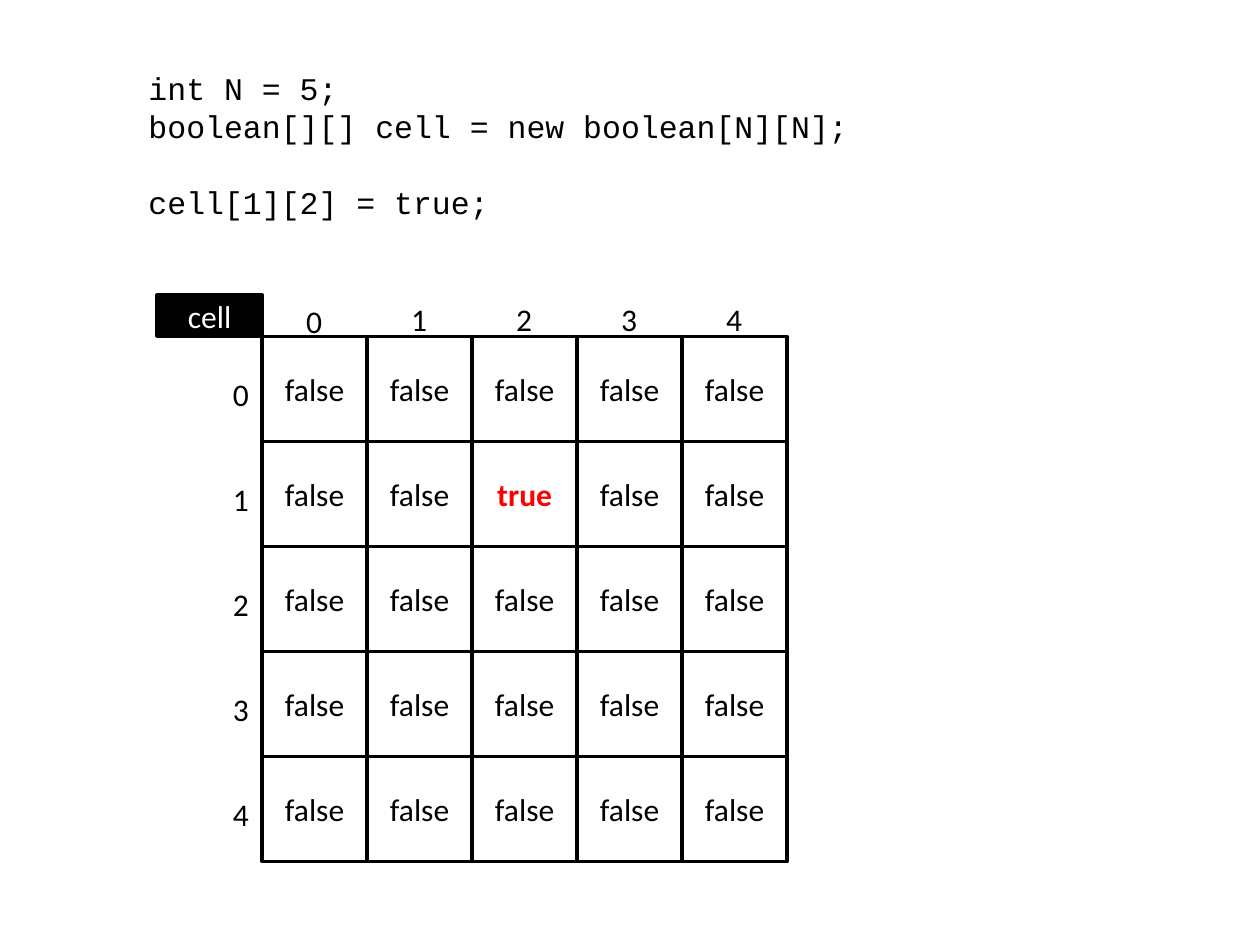
"""Build a slide showing a two-dimensional boolean array and the code that fills it."""
from pptx import Presentation
from pptx import util as u
from pptx.dml.color import RGBColor
from pptx.enum import shapes, text

CODE = ["int N = 5;", "boolean[][] cell = new boolean[N][N];", "cell[1][2] = true;"]
ARRAY_NAME = "cell"
SIZE = 5
TRUE_CELLS = {(1, 2)}
COLORS = {"ink": "000000", "paper": "FFFFFF", "true": "FF0000"}

SIDE = 5 / 6
GRID_LEFT, GRID_TOP = 2.08, 2.67
HEADER_HEIGHT = 0.33
LABEL_WIDTH, LABEL_HEIGHT = 0.33, 0.4
BLANK_LINE = u.Pt(21.7)


def color(name):
    return RGBColor.from_string(COLORS[name])


def write(box, lines, ink="ink", **formats):
    frame = box.text_frame
    for number, line in enumerate(lines):
        para = frame.paragraphs[0] if number == 0 else frame.add_paragraph()
        span = para.add_run()
        span.text = line
        span.font.color.rgb = color(ink)
        for key, value in {"size": u.Pt(18), "name": "Calibri", **formats}.items():
            setattr(span.font, key, value)
    return frame


def add_box(page, place, label, fill="paper", ink="ink", **formats):
    box = page.shapes.add_shape(shapes.MSO_SHAPE.RECTANGLE, *map(u.Inches, place))
    box.shadow.inherit = False
    box.fill.solid()
    box.fill.fore_color.rgb = color(fill)
    box.line.color.rgb = color("ink")
    box.line.width = u.Pt(2)
    frame = write(box, [label], ink, **formats)
    frame.vertical_anchor = text.MSO_ANCHOR.MIDDLE
    frame.paragraphs[0].alignment = text.PP_ALIGN.CENTER


def add_text(page, place, lines, **formats):
    box = page.shapes.add_textbox(*map(u.Inches, place))
    frame = write(box, lines, **formats)
    frame.word_wrap = False
    frame.auto_size = text.MSO_AUTO_SIZE.SHAPE_TO_FIT_TEXT
    return frame


def main():
    deck = Presentation()
    deck.slide_width, deck.slide_height = u.Inches(10), u.Inches(7.5)
    page = deck.slides.add_slide(deck.slide_layouts[6])

    add_box(page, (GRID_LEFT - SIDE, GRID_TOP - HEADER_HEIGHT, SIDE, HEADER_HEIGHT),
            ARRAY_NAME, fill="ink", ink="paper")
    for column in range(SIZE):
        for row in range(SIZE):
            place = (GRID_LEFT + column * SIDE, GRID_TOP + row * SIDE, SIDE, SIDE)
            if (row, column) in TRUE_CELLS:
                add_box(page, place, "true", ink="true", bold=True)
            else:
                add_box(page, place, "false")

    for index in range(SIZE):
        offset = index * SIDE
        column_top = 2.35 if index == 0 else 2.33
        for left, top in ((GRID_LEFT - LABEL_WIDTH, GRID_TOP + 0.26 + offset),
                          (GRID_LEFT + (SIDE - LABEL_WIDTH) / 2 + offset, column_top)):
            add_text(page, (left, top, LABEL_WIDTH, LABEL_HEIGHT), [str(index)])

    code = add_text(page, (1.08, 0.5, 5.78, 1.31), CODE, name="Courier New")
    code.paragraphs[-1].space_before = BLANK_LINE
    deck.save("out.pptx")


if __name__ == "__main__":
    main()
